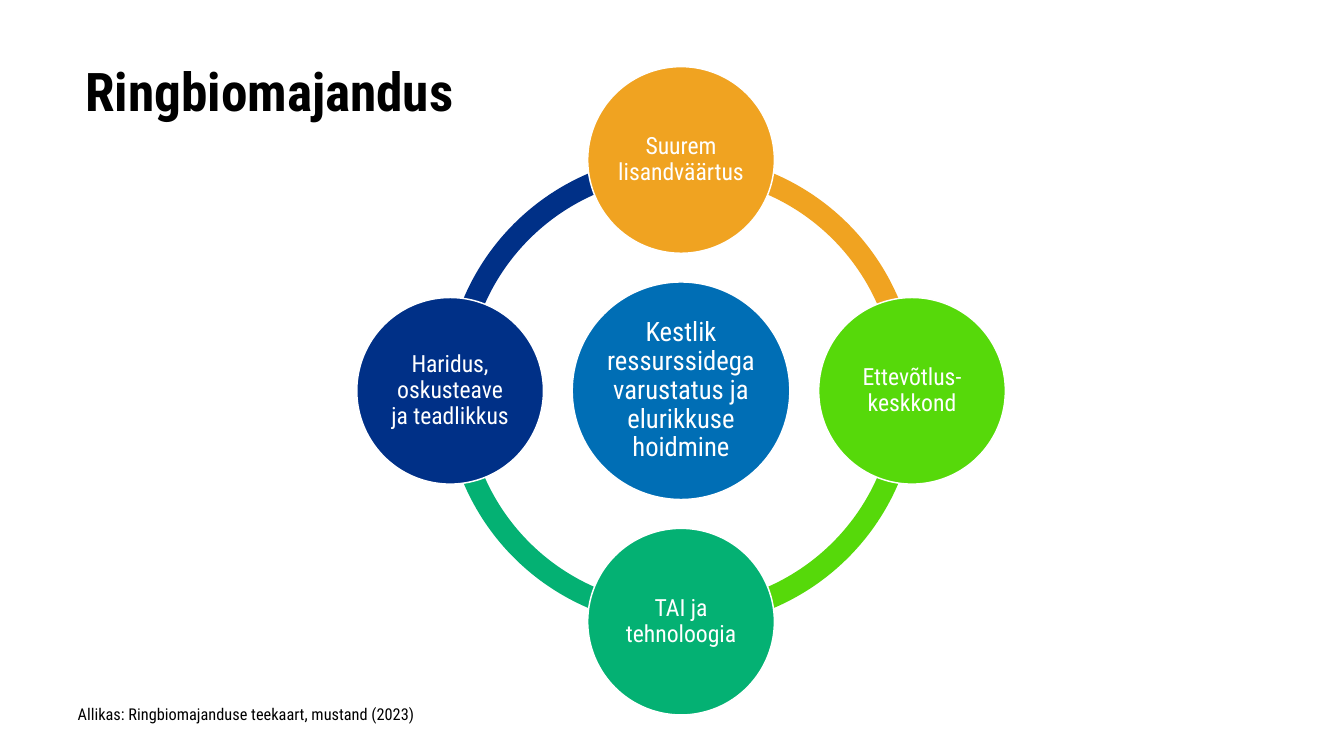
import math
from pptx import Presentation
from pptx import util as u
from pptx.dml.color import RGBColor
from pptx.enum import shapes, text

COLORS = {"navy": "003087", "teal": "04B173", "lime": "56D90A", "orange": "F0A321",
          "blue": "006EB5", "white": "FFFFFF", "black": "000000"}
FONT = "Roboto Condensed"
COLS, ROWS = 1260, 709

prs = Presentation()
prs.slide_width, prs.slide_height = u.Inches(12.6), u.Inches(7.09)
cell = prs.slide_width / COLS
s = prs.slides.add_slide(prs.slide_layouts[6])


def grid(*lengths):
    return [round(n * cell) for n in lengths]


def write(sp, words, size, color="white", bold=False, align=text.PP_ALIGN.CENTER,
          anchor=text.MSO_ANCHOR.MIDDLE, spacing=0.9, insets=(2, 2, 2, 2)):
    tf = sp.text_frame
    tf.word_wrap = True
    tf.vertical_anchor = anchor
    tf.margin_left, tf.margin_top, tf.margin_right, tf.margin_bottom = grid(*insets)
    p = tf.paragraphs[0]
    p.alignment = align
    p.line_spacing = spacing
    r = p.add_run()
    r.text = words
    r.font.name = FONT
    r.font.size = u.Pt(size)
    r.font.bold = bold
    r.font.color.rgb = RGBColor.from_string(COLORS[color])


headings = [
    ("Ringbiomajandus", (70, 56, 1109, 112), 36, True, 0.88, (10, 6, 10, 5)),
    ("Allikas: Ringbiomajanduse teekaart, mustand (2023)", (63, 654, 858, 30),
     11, False, 1.1, (10, 5, 10, 5)),
]
for words, box, size, bold, spacing, insets in headings:
    sp = s.shapes.add_textbox(*grid(*box))
    write(sp, words, size, "black", bold, text.PP_ALIGN.LEFT, text.MSO_ANCHOR.TOP,
          spacing, insets)

cx, cy, orbit = 638.5, 366.5, 216.5
ring, hub, node = 443, 204, 175
nodes = [
    ("Ettevõtlus-keskkond", "lime"),
    ("TAI ja tehnoloogia", "teal"),
    ("Haridus, oskusteave ja teadlikkus", "navy"),
    ("Suurem lisandväärtus", "orange"),
]
quarter = 54

discs = []
for i, (words, color) in enumerate(nodes):
    discs.append(("BLOCK_ARC", cx, cy, ring, color, "", 0, i))
discs.append(("OVAL", cx, cy, hub, "blue",
              "Kestlik ressurssidega varustatus ja elurikkuse hoidmine", 18, 0))
for i, (words, color) in enumerate(nodes):
    angle = i * math.pi / 2
    discs.append(("OVAL", cx + orbit * math.cos(angle), cy + orbit * math.sin(angle),
                  node, color, words, 16, i))

for kind, x, y, size, color, words, points, i in discs:
    sp = s.shapes.add_shape(shapes.MSO_SHAPE[kind],
                            *grid(x - size / 2, y - size / 2, size, size))
    sp.shadow.inherit = False
    sp.fill.solid()
    sp.fill.fore_color.rgb = RGBColor.from_string(COLORS[color])
    if kind == "BLOCK_ARC":
        sp.line.fill.background()
        sp.adjustments[0] = i * quarter
        sp.adjustments[1] = (i + 1) % len(nodes) * quarter
        sp.adjustments[2] = 0.046
    else:
        sp.line.color.rgb = RGBColor.from_string(COLORS["white"])
        sp.line.width = u.Pt(1)
        write(sp, words, points)

prs.save("out.pptx")
